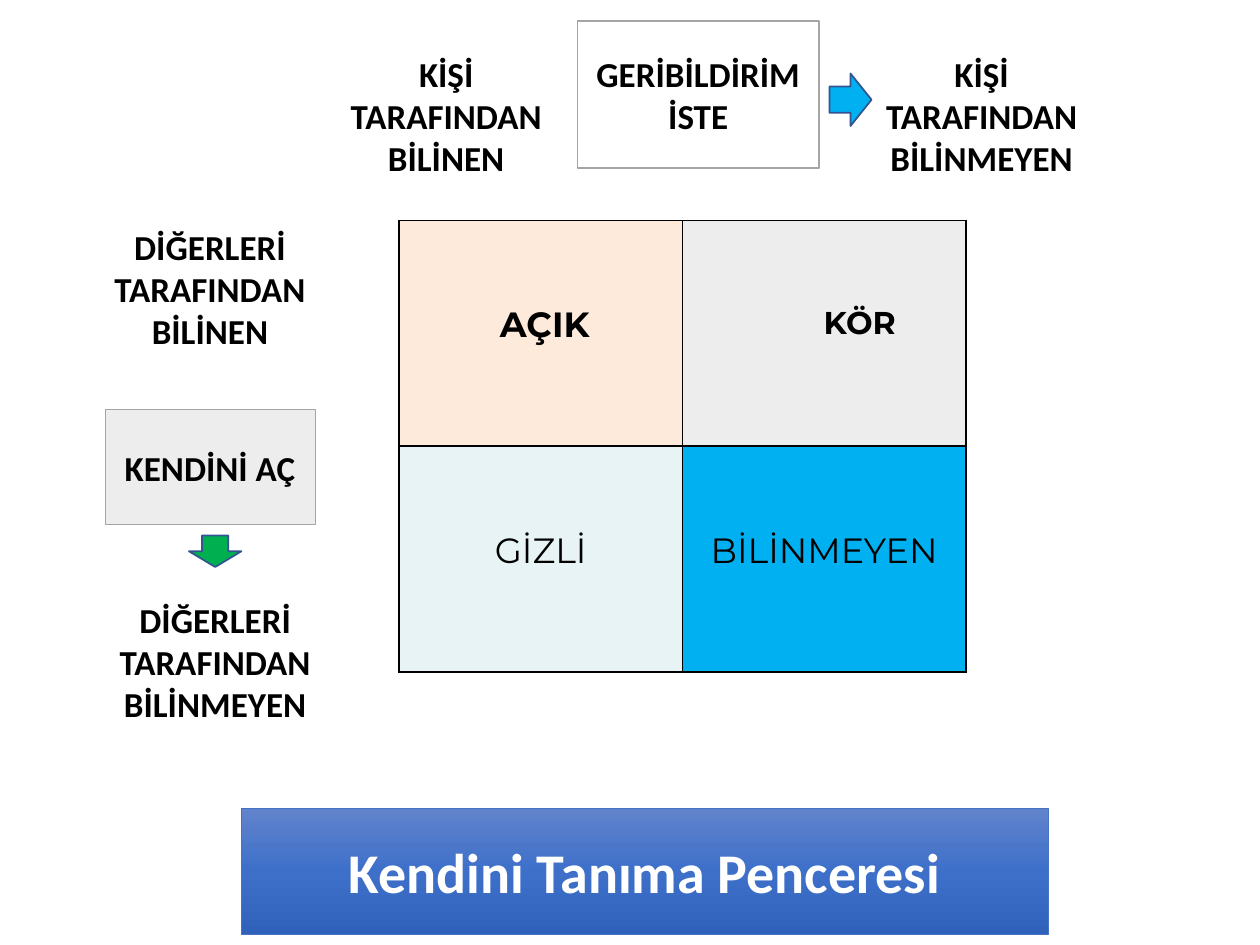
"""Build the self-awareness window slide."""
from copy import deepcopy
from pptx import Presentation
from pptx.dml.color import RGBColor
from pptx.enum import shapes, text
from pptx.oxml import parse_xml
from pptx.oxml.ns import nsdecls, qn
from pptx.util import Pt

KIND = shapes.MSO_SHAPE
SIDE = 162, 129
GRID = 228, 126
CELLS = [
    [("AÇIK", "FDEADA", 20, True, 4.5), ("KÖR", "EDEDED", 18, True, 40.5)],
    [("GİZLİ", "E7F3F4", 20, False, 0), ("BİLİNMEYEN", "00B0F0", 20, False, 0)],
]
BOXES = [
    ("KENDİNİ AÇ", (60, 234, 120, 66), "EDEDED", 0.5),
    ("DİĞERLERİ TARAFINDAN BİLİNMEYEN", (54, 330, 138, 96), "FFFFFF", 0),
    ("DİĞERLERİ TARAFINDAN BİLİNEN", (54, 120, 132, 90), "FFFFFF", 0),
    ("KİŞİ\nTARAFINDAN BİLİNMEYEN", (492, 18, 138, 96), "FFFFFF", 0),
    ("KİŞİ TARAFINDAN BİLİNEN", (186, 18, 138, 96), "FFFFFF", 0),
    ("GERİBİLDİRİM İSTE", (330, 12, 138, 84), "FFFFFF", 1),
]
ARROWS = [
    (KIND.DOWN_ARROW, (108, 306, 30, 18), "00B050"),
    (KIND.RIGHT_ARROW, (474, 42, 24, 30), "00B0F0"),
]
TITLE = "Kendini Tanıma Penceresi", (138, 462, 461, 72)
SHADES = [(0, "6183CB"), (0.5, "3E70CA"), (1, "3062BB")]


def rgb(code):
    """Turn a hex string into a colour."""
    return RGBColor.from_string(code)


def write(frame, words, size=20, font="Calibri", color="000000", bold=True):
    """Fill a text frame with centred text, one paragraph a line."""
    frame.word_wrap = True
    frame.text = words
    for para in frame.paragraphs:
        para.alignment = text.PP_ALIGN.CENTER
        for run in para.runs:
            run.font.size, run.font.name, run.font.bold = Pt(size), font, bold
            run.font.color.rgb = rgb(color)


def draw(slide, kind, area, fill=None, line=None, width=1):
    """Add a flat shape with an optional fill and outline."""
    shape = slide.shapes.add_shape(kind, *map(Pt, area))
    shape.shadow.inherit = False
    if fill:
        shape.fill.solid()
        shape.fill.fore_color.rgb = rgb(fill)
    if line and width:
        shape.line.color.rgb = rgb(line)
        shape.line.width = Pt(width)
    else:
        shape.line.fill.background()
    shape.text_frame.vertical_anchor = text.MSO_ANCHOR.MIDDLE
    return shape


def edge(cell):
    """Give a cell thin black borders."""
    props = cell._tc.get_or_add_tcPr()
    for spot, side in enumerate("LRTB"):
        props.insert(spot, parse_xml(
            f'<a:ln{side} {nsdecls("a")} w="12700"><a:solidFill>'
            f'<a:srgbClr val="000000"/></a:solidFill></a:ln{side}>'))


def window(slide):
    """Add the two-by-two table."""
    wide, high = SIDE
    table = slide.shapes.add_table(
        2, 2, *map(Pt, (*GRID, 2 * wide, 2 * high))).table
    for r, row in enumerate(CELLS):
        table.rows[r].height = Pt(high)
        for c, (words, fill, size, bold, shift) in enumerate(row):
            table.columns[c].width = Pt(wide)
            cell = table.cell(r, c)
            cell.fill.solid()
            cell.fill.fore_color.rgb = rgb(fill)
            cell.margin_top = Pt(47.5)
            cell.margin_left = Pt(7.2 + shift)
            write(cell.text_frame, words, size=size, font="Montserrat", bold=bold)
            edge(cell)


def banner(slide):
    """Add the title bar with its three-stop gradient."""
    words, area = TITLE
    bar = draw(slide, KIND.RECTANGLE, area, line="4472C4", width=0.5)
    bar.fill.gradient()
    bar.fill.gradient_angle = 270
    stops = bar._element.spPr.find(".//" + qn("a:gsLst"))
    stops.append(deepcopy(stops[0]))
    for stop, (place, code) in zip(bar.fill.gradient_stops, SHADES):
        stop.position = place
        stop.color.rgb = rgb(code)
    write(bar.text_frame, words, size=32, color="FFFFFF")


def main():
    """Build and save the slide."""
    deck = Presentation()
    deck.slide_width, deck.slide_height = Pt(720), Pt(540)
    slide = deck.slides.add_slide(deck.slide_layouts[6])
    window(slide)
    for words, area, fill, width in BOXES:
        box = draw(slide, KIND.RECTANGLE, area, fill, "A5A5A5", width)
        write(box.text_frame, words)
    for kind, area, fill in ARROWS:
        draw(slide, kind, area, fill, "325491")
    banner(slide)
    deck.save("out.pptx")


if __name__ == "__main__":
    main()
